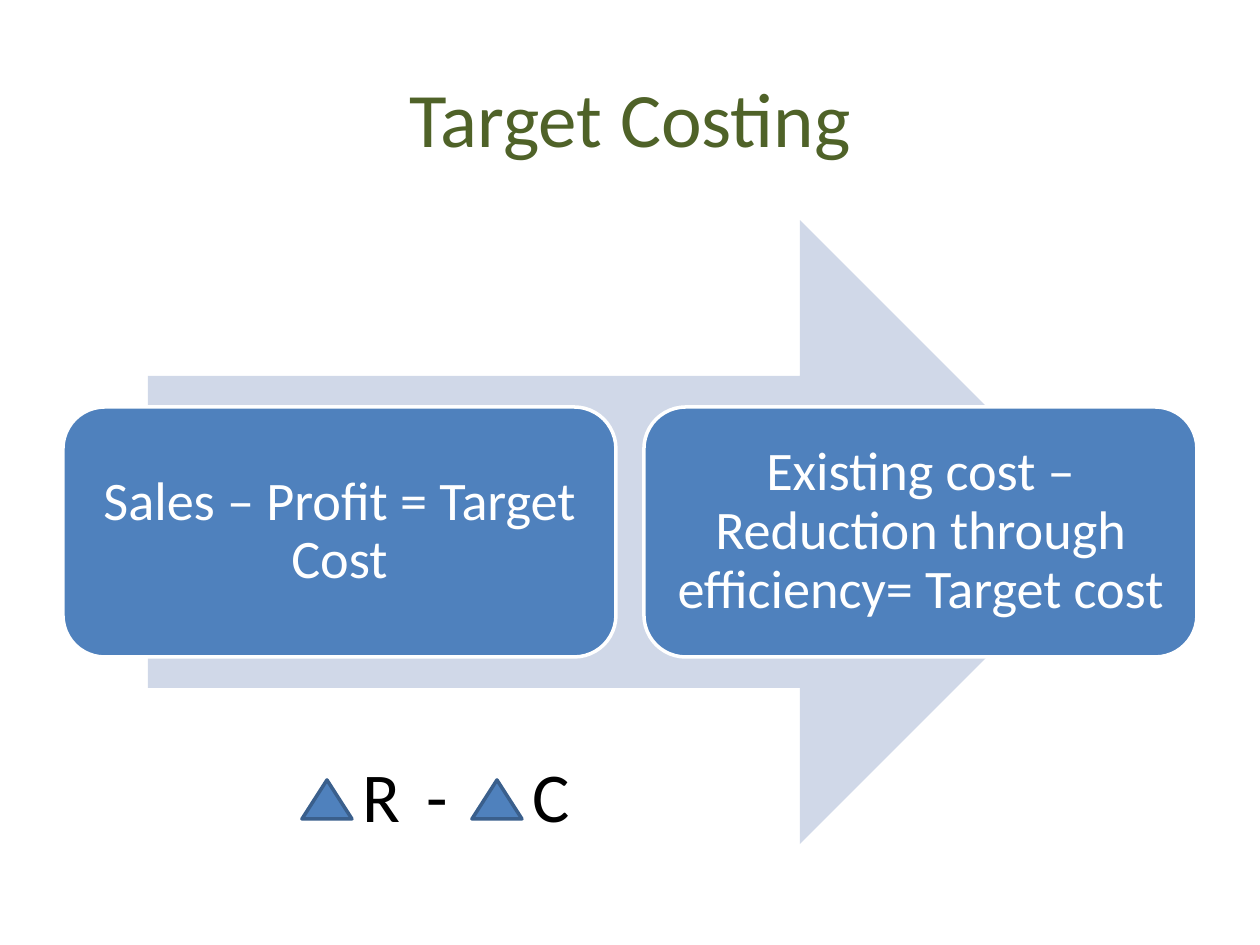
from pptx import Presentation
from pptx.dml.color import RGBColor
from pptx.enum.shapes import MSO_SHAPE
from pptx.enum.text import MSO_ANCHOR, PP_ALIGN
from pptx.util import Emu, Pt

ARROW = MSO_SHAPE.RIGHT_ARROW
ROUND = MSO_SHAPE.ROUNDED_RECTANGLE
DELTA = MSO_SHAPE.ISOSCELES_TRIANGLE
MIDDLE = MSO_ANCHOR.MIDDLE
CENTER = PP_ALIGN.CENTER
SCALE = 914400 / 126
COLORS = {
    "title": "4F6228",
    "arrow": "D0D8E8",
    "blue": "4F81BD",
    "edge": "3A5F8C",
    "white": "FFFFFF",
    "black": "000000",
}


def px(*sizes):
    return [Emu(round(size * SCALE)) for size in sizes]


def tint(name):
    return RGBColor.from_string(COLORS[name])


class Deck:
    """Holds the text style and the current slide."""

    def __init__(self, font):
        self.font = font
        self.show = Presentation()
        self.show.slide_width, self.show.slide_height = px(1260, 945)
        self.slide = self.show.slides.add_slide(self.show.slide_layouts[5])

    def words(self, shape, text, size, color):
        frame = shape.text_frame
        frame.text = text
        frame.word_wrap = True
        frame.vertical_anchor = MIDDLE
        line = frame.paragraphs[0]
        line.alignment = CENTER
        font = line.runs[0].font
        font.name, font.size = self.font, Pt(size)
        font.color.rgb = tint(color)
        return frame

    def title(self, text, box):
        head = self.slide.shapes.title
        head.left, head.top, head.width, head.height = px(*box)
        self.words(head, text, 44, "title")

    def shape(self, kind, box, fill, edge=None):
        item = self.slide.shapes.add_shape(kind, *px(*box))
        item.shadow.inherit = False
        item.fill.solid()
        item.fill.fore_color.rgb = tint(fill)
        if edge:
            item.line.color.rgb = tint(edge)
            item.line.width = Pt(2)
        else:
            item.line.fill.background()
        return item

    def card(self, text, box):
        item = self.shape(ROUND, box, "blue", "white")
        frame = self.words(item, text, 31, "white")
        frame.margin_left, frame.margin_right = px(4, 4)
        frame.margin_top, frame.margin_bottom = px(4, 4)
        frame.paragraphs[0].line_spacing = 0.9

    def label(self, text, box):
        item = self.slide.shapes.add_textbox(*px(*box))
        self.words(item, text, 40, "black")


def main():
    deck = Deck("Calibri")
    deck.title("Target Costing", (63, 38, 1134, 157))
    deck.shape(ARROW, (148, 220, 964, 624), "arrow")
    cards = (
        "Sales – Profit = Target Cost",
        "Existing cost – Reduction through efficiency= Target cost",
    )
    for col, text in enumerate(cards):
        deck.card(text, (63 + col * 581, 407, 553, 250))
    for col, text in enumerate("RC"):
        left = 302 + col * 170
        deck.shape(DELTA, (left, 780, 50, 39), "blue", "edge")
        deck.label(text, (left + 20, 750, 118, 89))
    deck.label("-", (378, 750, 118, 89))
    deck.show.save("out.pptx")


if __name__ == "__main__":
    main()
